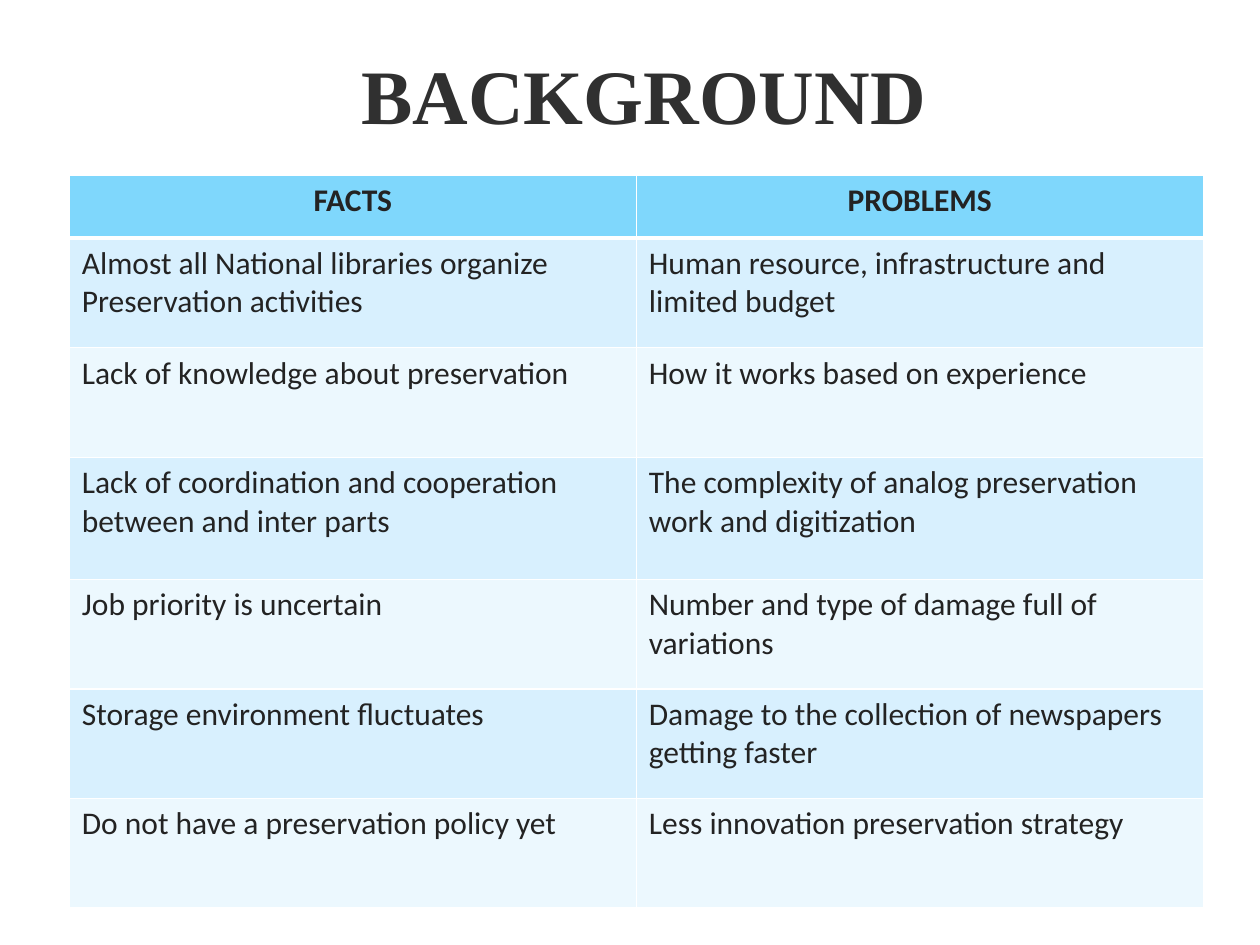
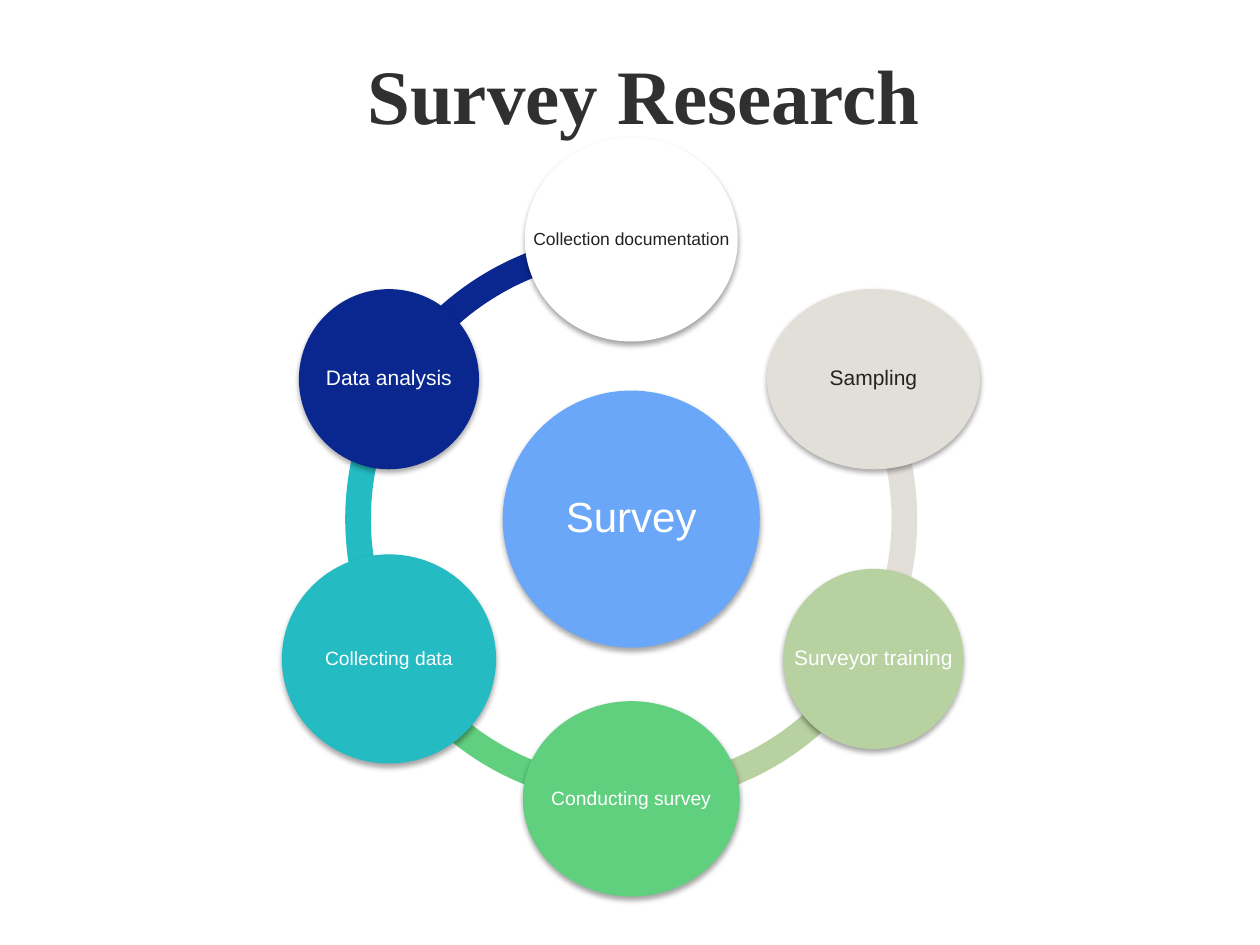
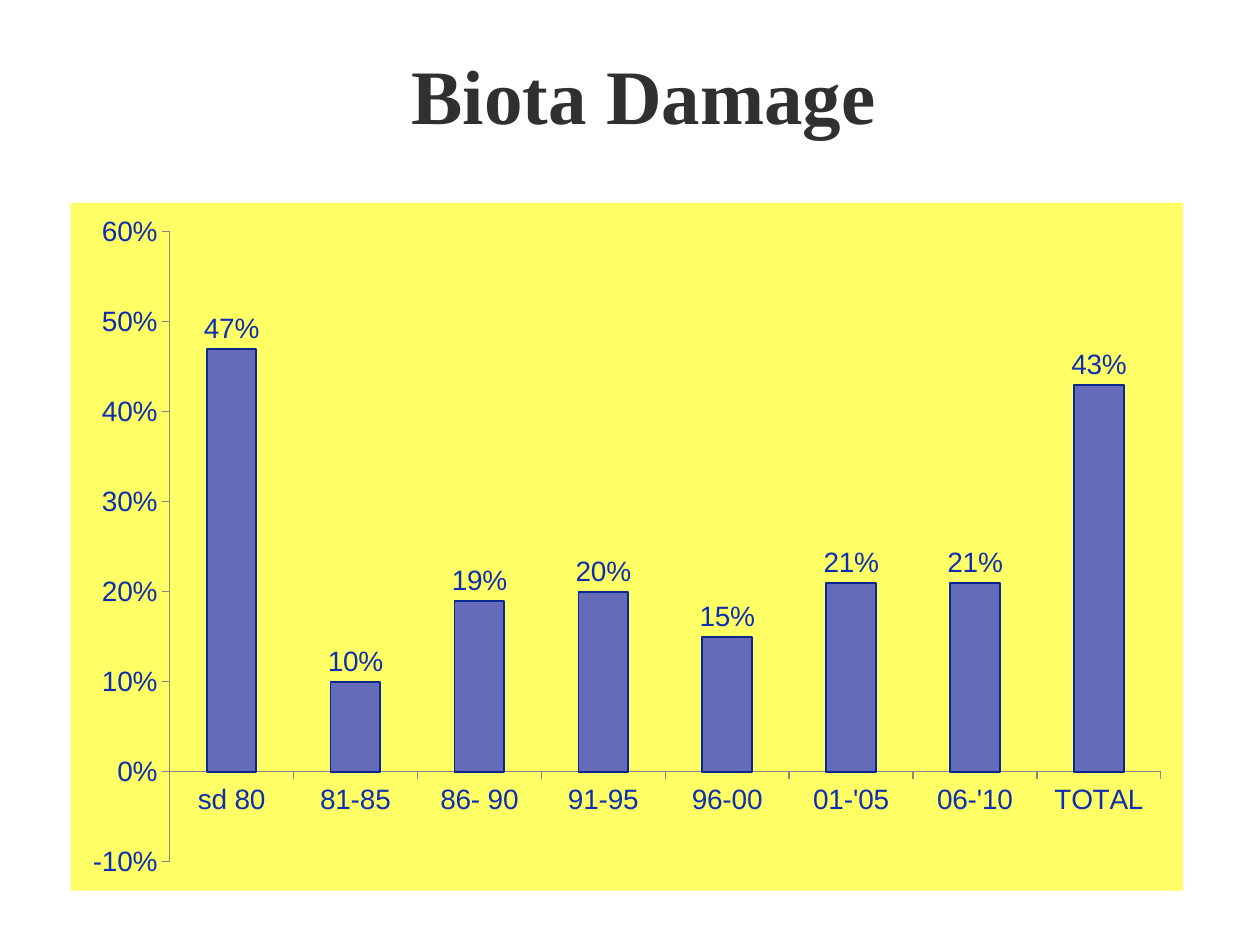
from math import cos, radians, sin

from lxml.etree import SubElement
from pptx import Presentation
from pptx.chart.data import CategoryChartData
from pptx.dml.color import RGBColor
from pptx.enum.chart import XL_CHART_TYPE, XL_LABEL_POSITION, XL_TICK_MARK
from pptx.enum.shapes import MSO_SHAPE
from pptx.enum.text import MSO_ANCHOR, PP_ALIGN
from pptx.oxml import parse_xml
from pptx.oxml.ns import nsdecls, qn
from pptx.util import Emu, Inches, Pt

COLS, ROWS = 10, 7.5
UNIT = Inches(1)  # one grid column or row

WHITE, INK, HEAD = "FFFFFF", "232323", "303030"
NAVY, BLUE = "0A2790", "0E2FAD"
TITLE_BOX = (0.72, 0.33, 8.78, 0.84)

FACTS = [
    ("FACTS", "PROBLEMS"),
    ("Almost all National libraries organize Preservation activities",
     "Human resource, infrastructure and limited budget"),
    ("Lack of knowledge about preservation",
     "How it works based on experience"),
    ("Lack of coordination and cooperation between and inter parts",
     "The complexity of analog preservation work and digitization"),
    ("Job priority is uncertain",
     "Number and type of damage full of variations"),
    ("Storage environment fluctuates",
     "Damage to the collection of newspapers getting faster"),
    ("Do not have a preservation policy yet",
     "Less innovation preservation strategy"),
]
HEIGHTS = [0.5, 0.87, 0.87, 0.97, 0.87, 0.87, 0.87]

# Clockwise from the top: label, width, height, fill, font colour, font size
STEPS = [
    ("Collection documentation", 1.69, 1.62, WHITE, INK, 10),
    ("Sampling", 1.69, 1.43, "E1DFD7", INK, 12),
    ("Surveyor training", 1.43, 1.43, "B7D1A0", WHITE, 12),
    ("Conducting survey", 1.72, 1.55, "60CF7E", WHITE, 11),
    ("Collecting data", 1.7, 1.66, "24BBC2", WHITE, 11),
    ("Data analysis", 1.43, 1.43, NAVY, WHITE, 12),
]
HUB = (5.01, 4.12)
RING, ORBIT = 4.54, 2.22

DAMAGE = {"sd 80": 0.47, "81-85": 0.1, "86- 90": 0.19, "91-95": 0.2,
          "96-00": 0.15, "01-'05": 0.21, "06-'10": 0.21, "TOTAL": 0.43}


def grid(*spans):
    return [Emu(round(span * UNIT)) for span in spans]


def around(mid, wide, high):
    """Box of the given size centred on mid."""
    return grid(mid[0] - wide / 2, mid[1] - high / 2, wide, high)


def rgb(code):
    return RGBColor.from_string(code)


def paint(item, code):
    item.fill.solid()
    item.fill.fore_color.rgb = rgb(code)


def write(frame, text, face, size, code, bold=False, align=PP_ALIGN.CENTER):
    para = frame.paragraphs[0]
    para.text = text
    para.alignment = align
    font = para.font
    font.name, font.size, font.bold = face, Pt(size), bold
    font.color.rgb = rgb(code)


def add_page(deck, title):
    page = deck.slides.add_slide(deck.slide_layouts[6])
    frame = page.shapes.add_textbox(*grid(*TITLE_BOX)).text_frame
    frame.word_wrap = True
    write(frame, title, "Times New Roman", 44, HEAD, bold=True)
    return page


def add_edges(cell, base):
    """White borders; base is the width of the lower one in points."""
    props = cell._tc.get_or_add_tcPr()
    for spot, (side, wide) in enumerate(zip("LRTB", (1, 1, 1, base))):
        props.insert(spot, parse_xml(
            f'<a:ln{side} {nsdecls("a")} w="{Pt(wide)}"><a:solidFill>'
            f'<a:srgbClr val="{WHITE}"/></a:solidFill></a:ln{side}>'))


def add_facts(page):
    area = grid(0.55, 1.39, 9, sum(HEIGHTS))
    table = page.shapes.add_table(len(FACTS), 2, *area).table
    for row, (texts, high) in enumerate(zip(FACTS, HEIGHTS)):
        table.rows[row].height = grid(high)[0]
        top = row == 0
        fill = "7FD7FC" if top else ("ECF8FE", "D8F0FE")[row % 2]
        align = PP_ALIGN.CENTER if top else PP_ALIGN.LEFT
        for col, text in enumerate(texts):
            cell = table.cell(row, col)
            paint(cell, fill)
            add_edges(cell, 3 if top else 1)
            write(cell.text_frame, text, "Calibri", 18, INK, top, align)


def add_form(page, kind, area, fill):
    form = page.shapes.add_shape(kind, *area)
    form.shadow.inherit = False
    paint(form, fill)
    form.line.fill.background()
    return form


def add_shade(form):
    list_ = form._element.spPr.find(qn("a:effectLst"))
    shade = SubElement(list_, qn("a:outerShdw"), blurRad=str(Pt(3.1)),
                       dist=str(Pt(1.8)), dir="5400000", rotWithShape="0")
    tint = SubElement(shade, qn("a:srgbClr"), val="000000")
    SubElement(tint, qn("a:alpha"), val="35000")


def add_disc(page, mid, text, wide, high, fill, ink, size):
    disc = add_form(page, MSO_SHAPE.OVAL, around(mid, wide, high), fill)
    add_shade(disc)
    frame = disc.text_frame
    frame.word_wrap = False
    frame.vertical_anchor = MSO_ANCHOR.MIDDLE
    write(frame, text, "Arial", size, ink)
    frame.paragraphs[0].line_spacing = 0.9


def add_arc(page, start, sweep, fill):
    arc = add_form(page, MSO_SHAPE.BLOCK_ARC, around(HUB, RING, RING), fill)
    # Adjustments count 0.6 per degree
    arc.adjustments[0] = start % 360 * 0.6
    arc.adjustments[1] = (start + sweep) % 360 * 0.6
    arc.adjustments[2] = 0.045


def add_cycle(page):
    sweep = 360 / len(STEPS)
    turns = [270 + sweep * spot for spot in range(len(STEPS))]
    for turn, step in reversed(list(zip(turns, STEPS))):
        add_arc(page, turn, sweep, step[3])
    add_disc(page, HUB, "Survey", 2.04, 2.04, "6BA7F8", WHITE, 24)
    for turn, step in zip(turns, STEPS):
        angle = radians(turn)
        mid = (HUB[0] + ORBIT * cos(angle), HUB[1] + ORBIT * sin(angle))
        add_disc(page, mid, *step)


def add_bars(page):
    data = CategoryChartData(number_format="0%")
    data.categories = list(DAMAGE)
    data.add_series("Series 1", list(DAMAGE.values()))
    chart = page.shapes.add_chart(XL_CHART_TYPE.COLUMN_CLUSTERED,
                                  *grid(0.56, 1.61, 8.83, 5.46), data).chart
    chart.has_legend = chart.has_title = False
    font = chart.font
    font.name, font.size, font.color.rgb = "Arial", Pt(16), rgb(BLUE)
    chart._chartSpace.find(qn("c:chart")).addnext(parse_xml(
        f'<c:spPr {nsdecls("c", "a")}><a:solidFill><a:srgbClr val="FFFF66"/>'
        '</a:solidFill><a:ln><a:noFill/></a:ln></c:spPr>'))

    plot = chart.plots[0]
    plot.gap_width, plot.vary_by_categories = 150, False
    bars = plot.series[0]
    paint(bars.format, "646BB8")
    bars.format.line.color.rgb = rgb(NAVY)
    bars.format.line.width = Pt(1)
    plot.has_data_labels = True
    labels = plot.data_labels
    labels.show_value = True
    labels.number_format, labels.number_format_is_linked = "0%", False
    labels.position = XL_LABEL_POSITION.OUTSIDE_END

    for axis in (chart.category_axis, chart.value_axis):
        axis.has_major_gridlines = False
        axis.major_tick_mark = XL_TICK_MARK.OUTSIDE
        axis.format.line.color.rgb = rgb("868686")
        axis.format.line.width = Pt(0.75)
    scale = chart.value_axis
    scale.minimum_scale, scale.maximum_scale = -0.1, 0.6
    scale.major_unit = 0.1
    scale.tick_labels.number_format = "0%"
    scale.tick_labels.number_format_is_linked = False


def main():
    deck = Presentation()
    deck.slide_width, deck.slide_height = grid(COLS, ROWS)
    add_facts(add_page(deck, "BACKGROUND"))
    add_cycle(add_page(deck, "Survey Research"))
    add_bars(add_page(deck, "Biota Damage"))
    deck.save("out.pptx")


if __name__ == "__main__":
    main()
